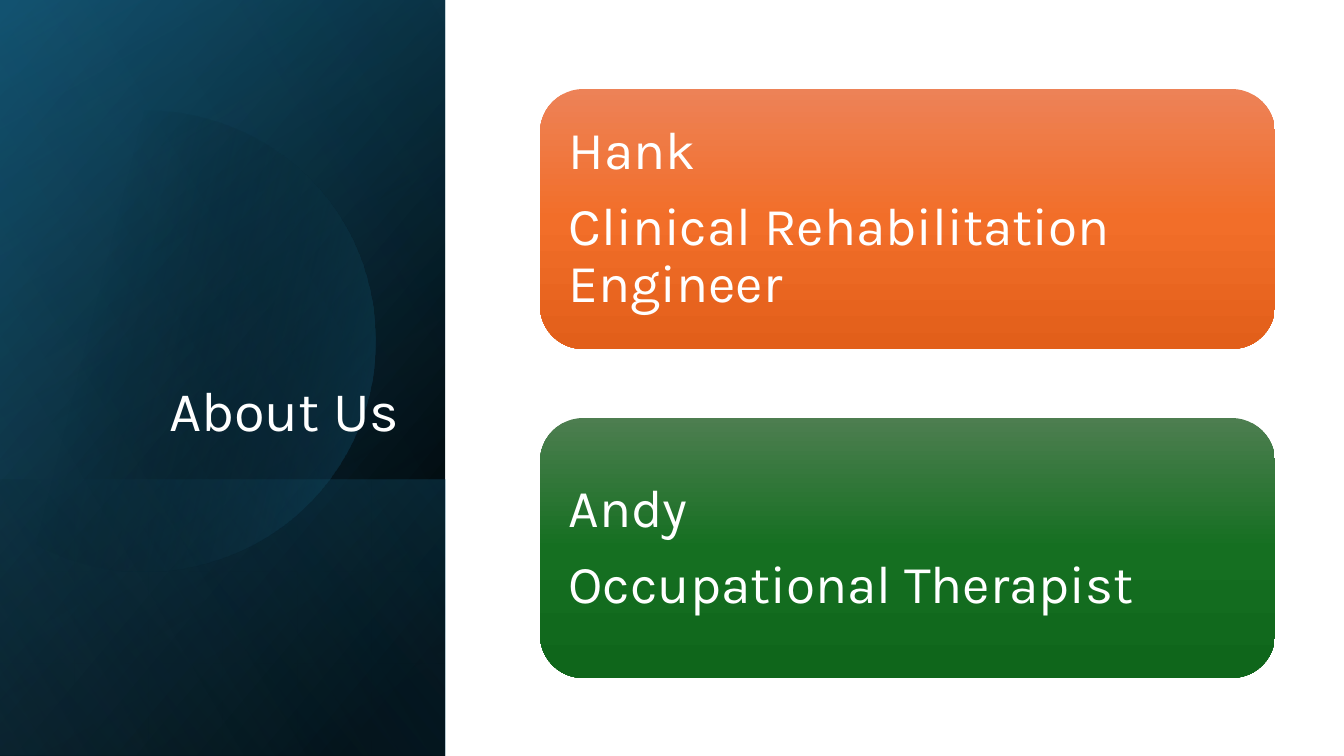
from dataclasses import dataclass
from typing import Any

from lxml.etree import SubElement
from pptx import Presentation
from pptx.dml.color import RGBColor
from pptx.enum.shapes import MSO_SHAPE
from pptx.enum.text import MSO_ANCHOR, PP_ALIGN
from pptx.oxml.ns import qn
from pptx.util import Emu, Pt

EMU_PER_PX = 12192000 / 1344


@dataclass(frozen=True)
class Theme:
    """Colours, font and type sizes of the slide."""
    black: str = "000000"
    deep_teal: str = "104862"
    teal: str = "156082"
    sky: str = "46B1E1"
    oranges: tuple[str, ...] = ("ED8257", "F26E29", "E25F1A")
    greens: tuple[str, ...] = ("4D7E50", "156F21", "0F661B")
    text: str = "FFFFFF"
    font: str = "Karla"
    title_size: int = 40
    card_size: int = 38
    card_gap: int = 13


@dataclass(frozen=True)
class Stop:
    """One gradient stop: position and opacity in percent."""
    position: int
    colour: str
    opacity: int = 100


@dataclass(frozen=True)
class Gradient:
    """A linear gradient with its angle in degrees."""
    angle: int
    stops: tuple[Stop, ...]


@dataclass(frozen=True)
class Box:
    """A rectangle in px."""
    left: int
    top: int
    width: int
    height: int


@dataclass(frozen=True)
class Sheet:
    """A quarter-turned gradient layer of the side panel."""
    box: Box
    gradient: Gradient


@dataclass(frozen=True)
class Card:
    """A team member's card."""
    lines: tuple[str, ...]
    colours: tuple[str, ...]


THEME = Theme()
PANEL = Box(0, 0, 445, 756)
BAND = Box(0, 480, 445, 276)
TITLE = Box(65, 185, 344, 264)
FIRST_CARD = Box(540, 89, 735, 260)
CARD_PITCH = 329
CARD_INSET = 16
CURVE_STEPS = 24

BACK_SHEETS = (
    Sheet(PANEL, Gradient(50, (Stop(8, THEME.black), Stop(100, THEME.deep_teal)))),
    Sheet(PANEL, Gradient(30, (Stop(0, THEME.black, 0), Stop(99, THEME.teal, 46)))),
    Sheet(BAND, Gradient(130, (Stop(2, THEME.teal, 29), Stop(100, THEME.black, 30)))),
)
SHEEN = Sheet(PANEL, Gradient(120, (Stop(0, THEME.black, 0), Stop(99, THEME.sky, 11))))
DISC_GRADIENT = Gradient(14, (Stop(29, THEME.black, 0), Stop(100, THEME.teal, 43)))
DISC_START = (0, 162)
DISC_CURVES = (
    ((23, 143), (50, 128), (81, 120)),
    ((104, 114), (127, 111), (150, 111)),
    ((248, 113), (338, 178), (366, 277)),
    ((401, 400), (331, 527), (209, 562)),
    ((132, 585), (53, 565), (0, 520)),
)
CARDS = (
    Card(("Hank", "Clinical Rehabilitation Engineer"), THEME.oranges),
    Card(("Andy", "Occupational Therapist"), THEME.greens),
)


def px(length: float) -> Emu:
    """Turn px into EMU."""
    return Emu(round(length * EMU_PER_PX))


def frame(box: Box) -> tuple[Emu, ...]:
    """Give a box as left, top, width and height in EMU."""
    return tuple(px(side) for side in (box.left, box.top, box.width, box.height))


def set_values(target: Any, values: dict[str, Any]) -> None:
    """Set attributes from a dict of format values."""
    for name, value in values.items():
        setattr(target, name, value)


def paint(shape: Any, gradient: Gradient) -> None:
    """Give a shape a gradient fill, with no line and no shadow."""
    shape.shadow.inherit = False
    shape.line.fill.background()
    shape.fill.gradient()
    shape.fill.gradient_angle = 0
    fill = shape._element.spPr.find(qn("a:gradFill"))
    fill.find(qn("a:lin")).set("ang", str(gradient.angle * 60000))
    stop_list = fill.find(qn("a:gsLst"))
    stop_list.clear()
    for stop in gradient.stops:
        node = SubElement(stop_list, qn("a:gs"), pos=str(stop.position * 1000))
        colour = SubElement(node, qn("a:srgbClr"), val=stop.colour)
        if stop.opacity < 100:
            SubElement(colour, qn("a:alpha"), val=str(stop.opacity * 1000))


def write(shape: Any, lines: tuple[str, ...], size: int,
          frame_format: dict[str, Any], para_format: dict[str, Any]) -> None:
    """Write one paragraph per line into a shape."""
    text_frame = shape.text_frame
    set_values(text_frame, {"word_wrap": True, **frame_format})
    text_frame.text = "\n".join(lines)
    for para in text_frame.paragraphs:
        set_values(para, {"line_spacing": 0.9, **para_format})
        for span in para.runs:
            set_values(span.font, {"name": THEME.font, "size": Pt(size)})
            span.font.color.rgb = RGBColor.from_string(THEME.text)


def draw_sheet(page: Any, sheet: Sheet) -> None:
    """Draw a mirrored, quarter-turned layer that covers its box."""
    box = sheet.box
    shift = (box.width - box.height) / 2
    shape = page.shapes.add_shape(
        MSO_SHAPE.RECTANGLE, px(box.left + shift), px(box.top - shift),
        px(box.height), px(box.width))
    shape.rotation = 90
    shape._element.spPr.xfrm.set("flipH", "1")
    paint(shape, sheet.gradient)


def curve_points(start: tuple[int, int], curve: tuple[tuple[int, int], ...]) -> list[tuple[float, float]]:
    """Sample a cubic curve after its start point."""
    points = []
    for step in range(1, CURVE_STEPS + 1):
        t = step / CURVE_STEPS
        weights = ((1 - t) ** 3, 3 * t * (1 - t) ** 2, 3 * t ** 2 * (1 - t), t ** 3)
        corners = (start, *curve)
        points.append(tuple(
            sum(weight * corner[axis] for weight, corner in zip(weights, corners))
            for axis in (0, 1)))
    return points


def draw_disc(page: Any) -> None:
    """Draw the faint disc cut by the left edge."""
    points = []
    start = DISC_START
    for curve in DISC_CURVES:
        points += curve_points(start, curve)
        start = curve[-1]
    builder = page.shapes.build_freeform(*map(px, DISC_START))
    builder.add_line_segments([(px(x), px(y)) for x, y in points], close=True)
    paint(builder.convert_to_shape(), DISC_GRADIENT)


def draw_card(page: Any, card: Card, box: Box) -> None:
    """Draw a rounded card with its text."""
    shape = page.shapes.add_shape(MSO_SHAPE.ROUNDED_RECTANGLE, *frame(box))
    paint(shape, Gradient(90, tuple(
        Stop(50 * index, colour) for index, colour in enumerate(card.colours))))
    margins = {f"margin_{side}": px(CARD_INSET) for side in ("left", "top", "right", "bottom")}
    write(shape, card.lines, THEME.card_size,
          {"vertical_anchor": MSO_ANCHOR.MIDDLE, **margins},
          {"alignment": PP_ALIGN.LEFT, "space_after": Pt(THEME.card_gap)})


def main() -> None:
    """Build and save the slide."""
    deck = Presentation()
    set_values(deck, {"slide_width": px(1344), "slide_height": px(756)})
    page = deck.slides.add_slide(deck.slide_layouts[6])
    for sheet in BACK_SHEETS:
        draw_sheet(page, sheet)
    draw_disc(page)
    draw_sheet(page, SHEEN)
    write(page.shapes.add_textbox(*frame(TITLE)), ("About Us",), THEME.title_size,
          {"vertical_anchor": MSO_ANCHOR.BOTTOM}, {"alignment": PP_ALIGN.RIGHT})
    for index, card in enumerate(CARDS):
        top = FIRST_CARD.top + index * CARD_PITCH
        draw_card(page, card, Box(FIRST_CARD.left, top, FIRST_CARD.width, FIRST_CARD.height))
    deck.save("out.pptx")


if __name__ == "__main__":
    main()
